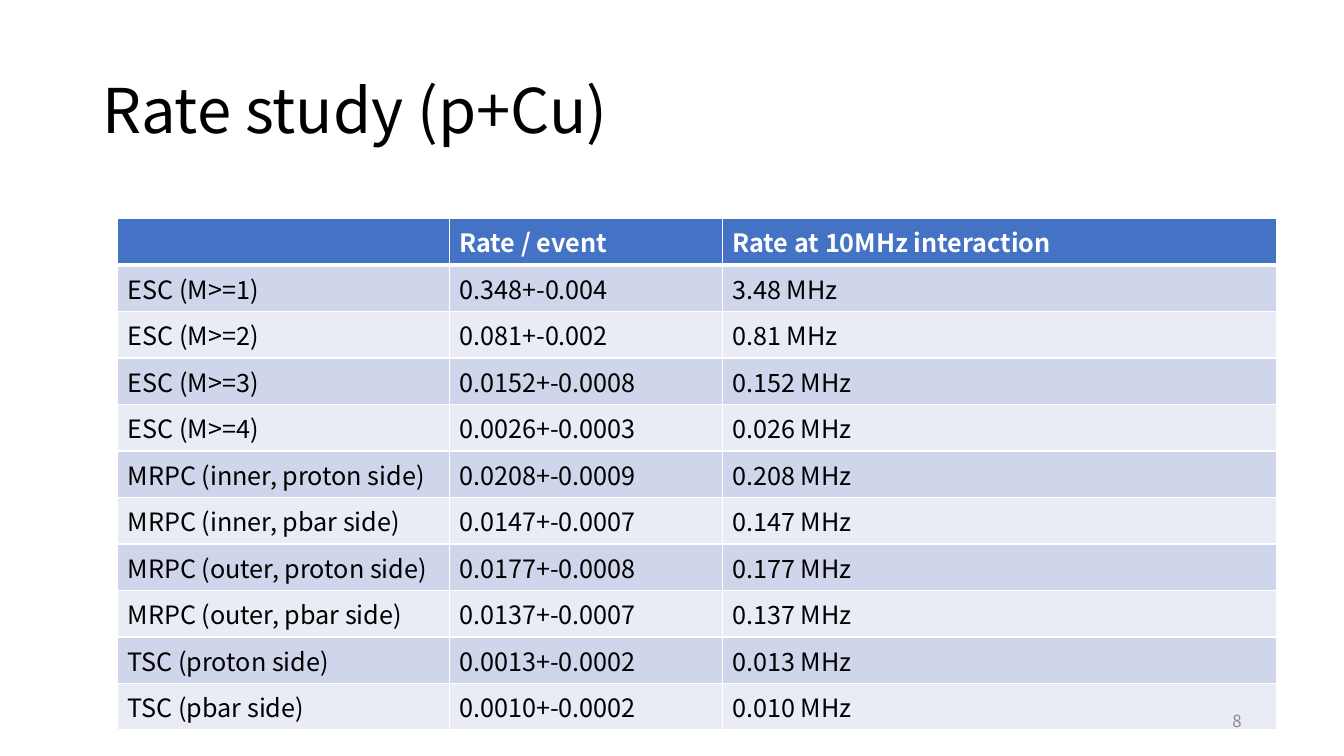
from dataclasses import dataclass

from lxml.etree import SubElement
from pptx import Presentation
from pptx.dml.color import RGBColor
from pptx.enum.text import MSO_ANCHOR, PP_ALIGN
from pptx.oxml.ns import qn
from pptx.util import Emu, Inches, Pt

FONT = "Noto Sans CJK JP"
WHITE, BLACK, GREY = "FFFFFF", "000000", "8C8C8C"
HEADER_FILL, BANDS = "4472C4", ("CFD5EA", "E9EBF5")
GRID_COLS, GRID_ROWS = 160, 90
UNIT = Inches(1) // 12

TABLE_LEFT, TABLE_TOP, ROW_HEIGHT = 14, 26, 5.54
COLUMN_WIDTHS = (39.5, 32.5, 66)
RATES = [
    ("", "Rate / event", "Rate at 10MHz interaction"),
    ("ESC (M>=1)", "0.348+-0.004", "3.48 MHz"),
    ("ESC (M>=2)", "0.081+-0.002", "0.81 MHz"),
    ("ESC (M>=3)", "0.0152+-0.0008", "0.152 MHz"),
    ("ESC (M>=4)", "0.0026+-0.0003", "0.026 MHz"),
    ("MRPC (inner, proton side)", "0.0208+-0.0009", "0.208 MHz"),
    ("MRPC (inner, pbar side)", "0.0147+-0.0007", "0.147 MHz"),
    ("MRPC (outer, proton side)", "0.0177+-0.0008", "0.177 MHz"),
    ("MRPC (outer, pbar side)", "0.0137+-0.0007", "0.137 MHz"),
    ("TSC (proton side)", "0.0013+-0.0002", "0.013 MHz"),
    ("TSC (pbar side)", "0.0010+-0.0002", "0.010 MHz"),
]


@dataclass
class Label:
    """A line of text, placed in grid columns and rows."""
    text: str
    left: float
    top: float
    width: float
    height: float
    size: float
    color: str
    align: PP_ALIGN = PP_ALIGN.LEFT
    spacing: float = 1.0


LABELS = [
    Label("Rate study (p+Cu)", 11, 4.8, 138, 17.4, 44, BLACK, spacing=0.9),
    Label("8", 113, 83.4, 36, 4.8, 12, GREY, PP_ALIGN.RIGHT),
]


def grid(units: float) -> Emu:
    return Emu(round(units * UNIT))


def rgb(color: str) -> RGBColor:
    return RGBColor.from_string(color)


def format_runs(tf, size: float, color: str, bold: bool = False) -> None:
    for p in tf.paragraphs:
        for r in p.runs:
            r.font.name, r.font.size, r.font.bold = FONT, Pt(size), bold
            r.font.color.rgb = rgb(color)


def add_label(s, label: Label) -> None:
    sp = s.shapes.add_textbox(grid(label.left), grid(label.top),
                              grid(label.width), grid(label.height))
    tf = sp.text_frame
    tf.word_wrap = True
    tf.vertical_anchor = MSO_ANCHOR.MIDDLE
    tf.text = label.text
    p = tf.paragraphs[0]
    p.alignment, p.line_spacing = label.align, label.spacing
    format_runs(tf, label.size, label.color)


def set_borders(cell, top: float, bottom: float) -> None:
    """Draw white cell borders; they must precede the fill in the XML."""
    tc_pr = cell._tc.get_or_add_tcPr()
    widths = {"a:lnL": 1, "a:lnR": 1, "a:lnT": top, "a:lnB": bottom}
    for i, (tag, width) in enumerate(widths.items()):
        ln = SubElement(tc_pr, qn(tag), w=str(Pt(width)))
        SubElement(SubElement(ln, qn("a:solidFill")), qn("a:srgbClr"), val=WHITE)
        tc_pr.insert(i, ln)


def add_rate_table(s) -> None:
    frame = s.shapes.add_table(
        len(RATES), len(COLUMN_WIDTHS), grid(TABLE_LEFT), grid(TABLE_TOP),
        grid(sum(COLUMN_WIDTHS)), grid(ROW_HEIGHT * len(RATES)))
    table = frame.table
    for column, width in zip(table.columns, COLUMN_WIDTHS):
        column.width = grid(width)
    for i, values in enumerate(RATES):
        header = i == 0
        table.rows[i].height = grid(ROW_HEIGHT)
        for j, value in enumerate(values):
            cell = table.cell(i, j)
            cell.text = value
            format_runs(cell.text_frame, 18, WHITE if header else BLACK, header)
            cell.fill.solid()
            cell.fill.fore_color.rgb = rgb(HEADER_FILL if header else BANDS[(i - 1) % 2])
            set_borders(cell, top=3 if i == 1 else 1, bottom=3 if header else 1)


def main() -> None:
    prs = Presentation()
    prs.slide_width, prs.slide_height = grid(GRID_COLS), grid(GRID_ROWS)
    s = prs.slides.add_slide(prs.slide_layouts[6])
    title, page_number = LABELS
    add_label(s, title)
    add_rate_table(s)
    add_label(s, page_number)
    prs.save("out.pptx")


if __name__ == "__main__":
    main()
